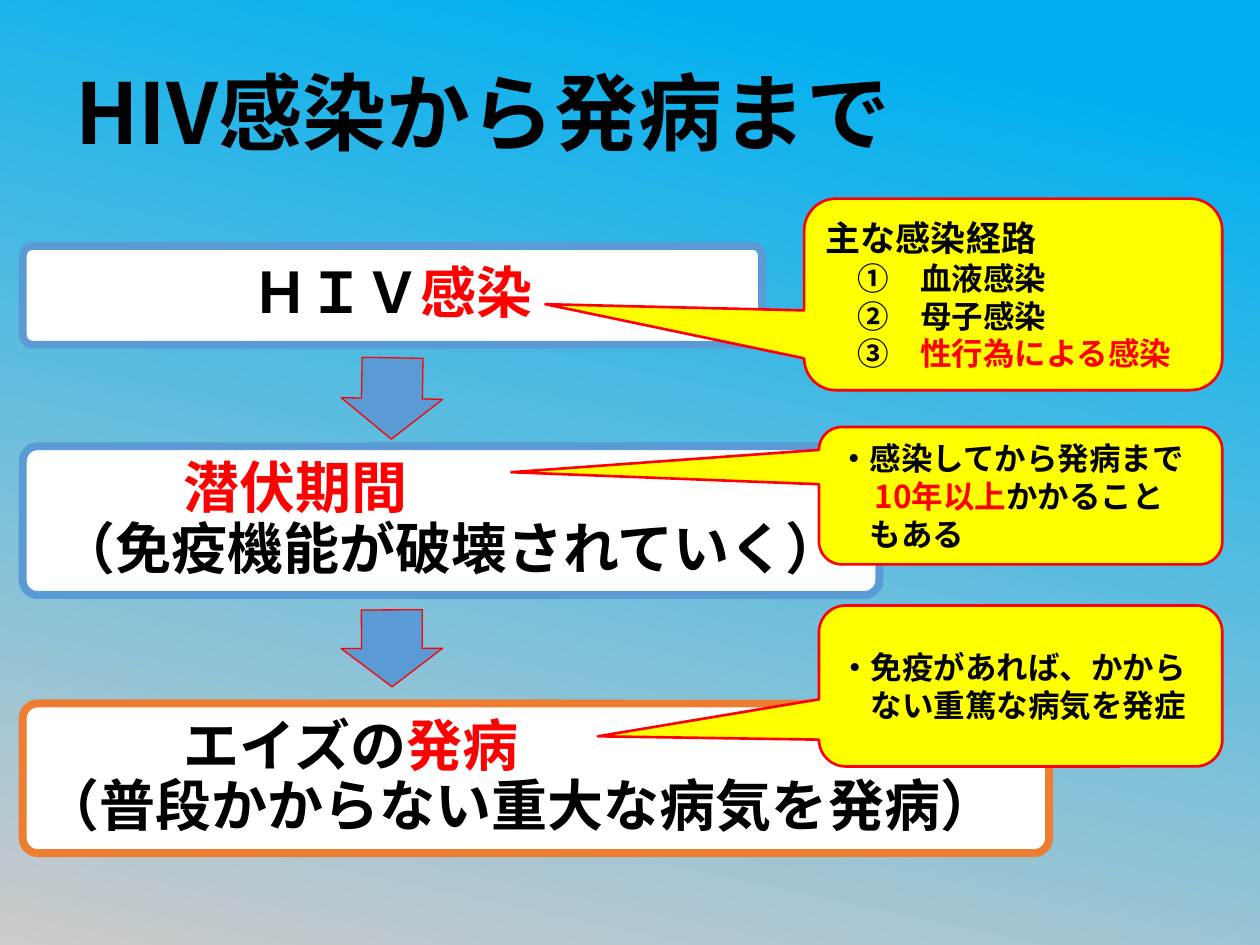
from pptx import Presentation
from pptx.dml.color import RGBColor
from pptx.enum.shapes import MSO_SHAPE as Form
from pptx.enum.text import MSO_ANCHOR as Anchor, PP_ALIGN as Align
from pptx.oxml.ns import qn
from pptx.util import Pt
from lxml.etree import SubElement

FONT = "Noto Sans CJK JP"
BLACK = RGBColor(0x00, 0x00, 0x00)
WHITE = RGBColor(0xFF, 0xFF, 0xFF)
RED = RGBColor(0xFF, 0x00, 0x00)
YELLOW = RGBColor(0xFF, 0xFF, 0x00)
BLUE = RGBColor(0x5B, 0x9B, 0xD5)
ORANGE = RGBColor(0xED, 0x7D, 0x31)
SKY = RGBColor(0x00, 0xB0, 0xF0)
GREY = RGBColor(0xCD, 0xCB, 0xCB)


def write(shape, lines, space=1.0, inset=None):
    """Fill a shape with lines of (size, indent or alignment, runs)."""
    frame = shape.text_frame
    frame.word_wrap = True
    frame.vertical_anchor = Anchor.MIDDLE
    if inset is not None:
        frame.margin_left = frame.margin_right = Pt(inset)
        frame.margin_top = frame.margin_bottom = Pt(inset)
    for i, (size, place, runs) in enumerate(lines):
        para = frame.paragraphs[0] if i == 0 else frame.add_paragraph()
        para.line_spacing = space
        if place is Align.CENTER:
            para.alignment = place
        else:
            para.alignment = Align.LEFT
            para._p.get_or_add_pPr().set("marL", str(Pt(place)))
        for text, color in runs:
            run = para.add_run()
            run.text = text
            font = run.font
            font.name, font.size, font.bold = FONT, Pt(size), True
            font.color.rgb = color
            SubElement(font._element, qn("a:ea")).set("typeface", FONT)


def add_form(slide, form, box, fill, line, width, adjust):
    shape = slide.shapes.add_shape(form, *map(Pt, box))
    shape.shadow.inherit = False
    shape.fill.solid()
    shape.fill.fore_color.rgb = fill
    shape.line.color.rgb = line
    shape.line.width = Pt(width)
    for i, value in enumerate(adjust):
        shape.adjustments[i] = value
    return shape


def add_title(slide, box):
    shape = slide.shapes.add_textbox(*map(Pt, box))
    write(shape, [(48, 11, [("HIV感染から発病まで", BLACK)])], 0.9)


def add_stage(slide, box, line, lines):
    shape = add_form(slide, Form.ROUNDED_RECTANGLE, box, WHITE, line, 4.5, [0.1])
    write(shape, [(32, *rest) for rest in lines], 0.9, 9.5)


def add_arrow(slide, box, turn):
    shape = add_form(slide, Form.DOWN_ARROW, box, BLUE, RED, 0.75, [0.6, 0.5])
    shape.rotation = turn


def add_note(slide, box, tip, lines):
    """Draw a callout; tip is its point, as shares of the box from its centre."""
    shape = add_form(slide, Form.ROUNDED_RECTANGULAR_CALLOUT, box, YELLOW, RED,
                     1.5, [*tip, 0.167])
    write(shape, lines)


def main():
    deck = Presentation()
    deck.slide_width, deck.slide_height = Pt(720), Pt(540)
    slide = deck.slides.add_slide(deck.slide_layouts[6])

    back = slide.background.fill
    back.gradient()
    back.gradient_angle = 258
    for stop, color, spot in zip(back.gradient_stops, (SKY, GREY), (0.1, 1)):
        stop.color.rgb = color
        stop.position = spot

    add_title(slide, (25, 42.5, 695, 49.5))

    left = 13
    add_stage(slide, (left, 140.5, 422.5, 56.5), BLUE, [
        (Align.CENTER, [("ＨＩＶ", BLACK), ("感染", RED)])])
    add_stage(slide, (left, 255, 489.5, 85), BLUE, [
        (80, [("潜伏期間", RED)]),
        (Align.CENTER, [("（免疫機能が破壊されていく）", BLACK)])])
    add_stage(slide, (left, 402, 586.5, 85.5), ORANGE, [
        (80, [("エイズの", BLACK), ("発病", RED)]),
        (0, [("（普段かからない重大な病気を発病）", BLACK)])])

    add_arrow(slide, (195, 204.5, 58, 46.5), 0.9)
    add_arrow(slide, (195, 348.5, 58, 44), -0.2)

    routes = [("①", "血液感染", BLACK), ("②", "母子感染", BLACK),
              ("③", "性行為による感染", RED)]
    add_note(slide, (459.5, 113.5, 239, 109.5), (-1.119, 0.051), [
        (20, 0, [("主な感染経路", BLACK)]),
        *((18, 18, [(mark + "　", BLACK), (text, color)])
          for mark, text, color in routes)])
    add_note(slide, (468, 244, 230.5, 78.5), (-1.263, -0.171), [
        (18, 0, [("・感染してから発病まで", BLACK)]),
        (18, 21, [("10年以上", RED), ("かかること", BLACK)]),
        (18, 18, [("もある", BLACK)])])
    add_note(slide, (468, 346, 230.5, 92), (-1.048, 0.313), [
        (18, 0, [("・免疫があれば、かから", BLACK)]),
        (18, 18, [("ない重篤な病気を発症", BLACK)])])

    deck.save("out.pptx")


if __name__ == "__main__":
    main()
